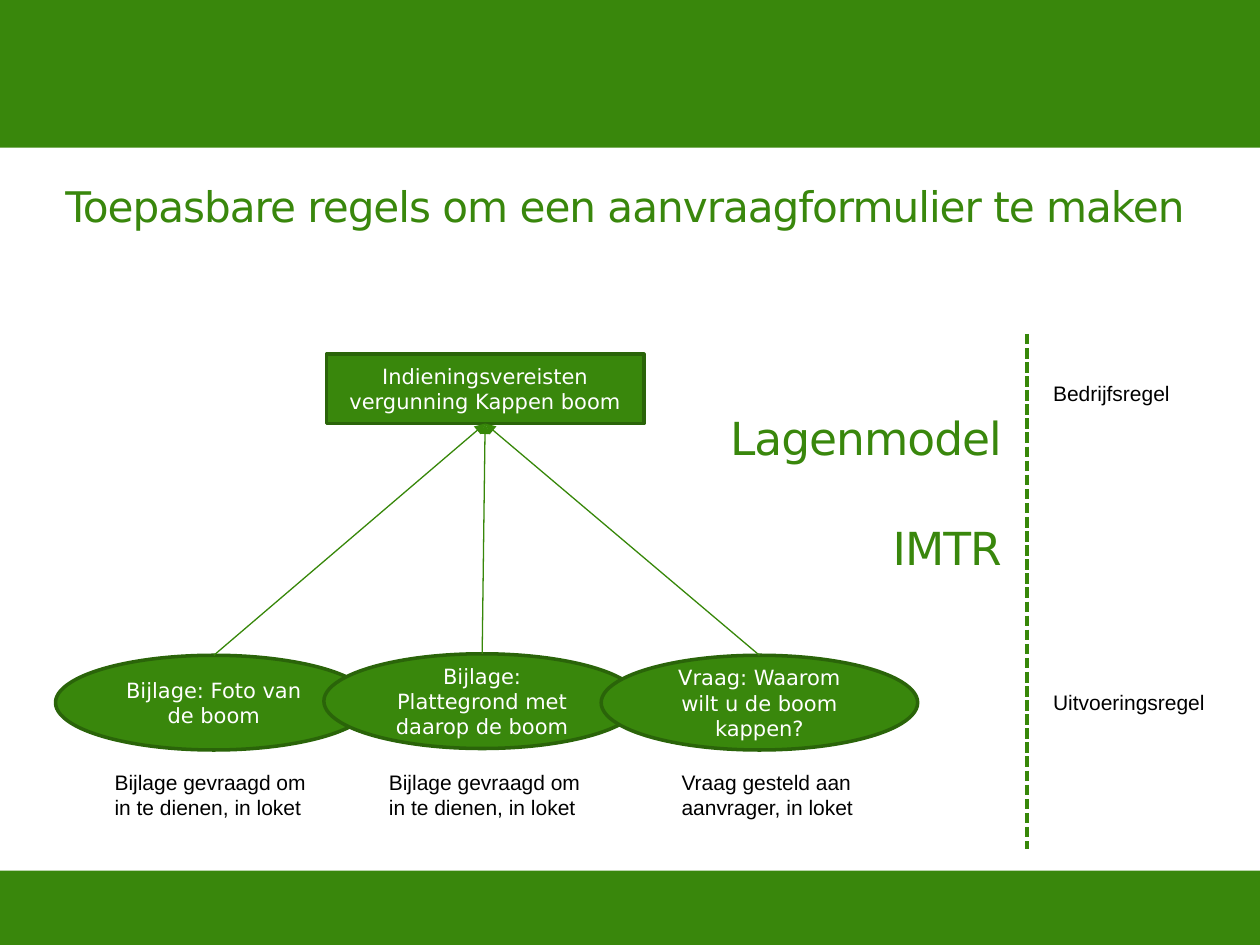
from lxml import etree
from pptx import Presentation
from pptx.dml.color import RGBColor
from pptx.enum.dml import MSO_LINE
from pptx.enum.shapes import MSO_CONNECTOR as LINK, MSO_SHAPE as SHAPE
from pptx.enum.text import MSO_ANCHOR as ANCHOR, MSO_AUTO_SIZE as FIT, PP_ALIGN as ALIGN
from pptx.oxml.ns import qn
from pptx.util import Cm, Pt

GREEN, DARK, LINE = "39870C", "2A6409", "378709"
WHITE, BLACK = "FFFFFF", "000000"
SANS, ARIAL = "DejaVu Sans", "Arial"


def color(text):
    return RGBColor.from_string(text)


def write(box, lines, frame, font, shade, align=ALIGN.LEFT, spacing=None):
    """Fill a shape with one paragraph per line."""
    for key, value in frame.items():
        setattr(box.text_frame, key, value)
    box.text_frame.text = "\n".join(lines)
    for para in box.text_frame.paragraphs:
        para.alignment = align
        span = para.runs[0]
        for key, value in font.items():
            setattr(span.font, key, value)
        span.font.color.rgb = color(shade)
        if spacing:
            span.font._element.set("spc", str(spacing))


deck = Presentation()
deck.slide_width, deck.slide_height = Cm(25.4), Cm(19.05)
page = deck.slides.add_slide(deck.slide_layouts[5])
shapes = page.shapes

# Green bands at the top and bottom
for top, height in [(17.55, 1.5), (0, 2.98)]:
    band = shapes.add_shape(SHAPE.RECTANGLE, 0, Cm(top), deck.slide_width, Cm(height))
    band.shadow.inherit = False
    band.fill.solid()
    band.fill.fore_color.rgb = color(GREEN)
    band.line.fill.background()

# Heading and the title placeholder
plain = {"word_wrap": True, "auto_size": FIT.NONE, "vertical_anchor": ANCHOR.TOP}
heading = shapes.add_textbox(Cm(1.07), Cm(3.51), Cm(23.85), Cm(1.57))
write(heading, ["Toepasbare regels om een aanvraagformulier te maken"], plain,
      {"size": Pt(24.1), "name": SANS}, GREEN, spacing=-60)

title = shapes.title
title.left, title.top, title.width, title.height = Cm(14.38), Cm(8.13), Cm(6.07), Cm(2.59)
write(title, ["Lagenmodel", "IMTR"], plain,
      {"size": Pt(26), "name": SANS}, GREEN, ALIGN.RIGHT, -60)
for para, gap in zip(title.text_frame.paragraphs, (0, 32)):
    para.space_before = Pt(gap)
for box in (heading, title):
    box.fill.solid()
    box.fill.fore_color.rgb = color(WHITE)

# Business rule (rectangle) and the implementation rules (ellipses)
nodes = [
    (SHAPE.RECTANGLE, 6.58, 7.14, 6.4, 1.4, "Indieningsvereisten vergunning Kappen boom"),
    (SHAPE.OVAL, 1.12, 13.21, 6.38, 1.91, "Bijlage: Foto van de boom"),
    (SHAPE.OVAL, 6.53, 13.18, 6.38, 1.91, "Bijlage: Plattegrond met daarop de boom"),
    (SHAPE.OVAL, 12.12, 13.21, 6.38, 1.91, "Vraag: Waarom wilt u de boom kappen?"),
]
rules = []
for kind, left, top, width, height, text in nodes:
    node = shapes.add_shape(kind, Cm(left), Cm(top), Cm(width), Cm(height))
    node.shadow.inherit = False
    node.fill.solid()
    node.fill.fore_color.rgb = color(GREEN)
    node.line.color.rgb = color(DARK)
    node.line.width = Pt(2)
    write(node, [text], {"word_wrap": True, "vertical_anchor": ANCHOR.MIDDLE},
          {"size": Pt(12), "name": SANS}, WHITE, ALIGN.CENTER)
    rules.append(node)

# Arrows from each ellipse to the business rule
business, *details = rules
links = []
for detail in details:
    arrow = shapes.add_connector(LINK.STRAIGHT, 0, 0, 0, 0)
    arrow.begin_connect(detail, 0)
    arrow.end_connect(business, 2)
    arrow.line.width = Pt(0.75)
    links.append(arrow)

# Dashed divider between the model and the layer names
divider = shapes.add_connector(LINK.STRAIGHT, Cm(20.7), Cm(6.73), Cm(20.7), Cm(17.12))
divider.line.width = Pt(2)
divider.line.dash_style = MSO_LINE.SQUARE_DOT

for link in links + [divider]:
    link.line.color.rgb = color(LINE)
    if link is not divider:
        etree.SubElement(link.line._get_or_add_ln(), qn("a:tailEnd"), type="triangle")
    etree.SubElement(link._element.spPr, qn("a:effectLst"))

# Layer names and captions
request = ["Bijlage gevraagd om in te dienen, in loket"]
labels = [
    (20.98, 7.54, 2.87, 0.76, False, ["Bedrijfsregel"]),
    (20.98, 13.77, 3.58, 0.76, False, ["Uitvoeringsregel"]),
    (2.06, 15.39, 4.52, 1.27, True, request),
    (7.59, 15.39, 4.52, 1.27, True, request),
    (13.49, 15.39, 4.06, 1.27, False, ["Vraag gesteld aan", "aanvrager, in loket"]),
]
for left, top, width, height, wrap, lines in labels:
    label = shapes.add_textbox(Cm(left), Cm(top), Cm(width), Cm(height))
    write(label, lines, {"word_wrap": wrap, "auto_size": FIT.SHAPE_TO_FIT_TEXT},
          {"size": Pt(12), "name": ARIAL}, BLACK)

deck.save("out.pptx")
